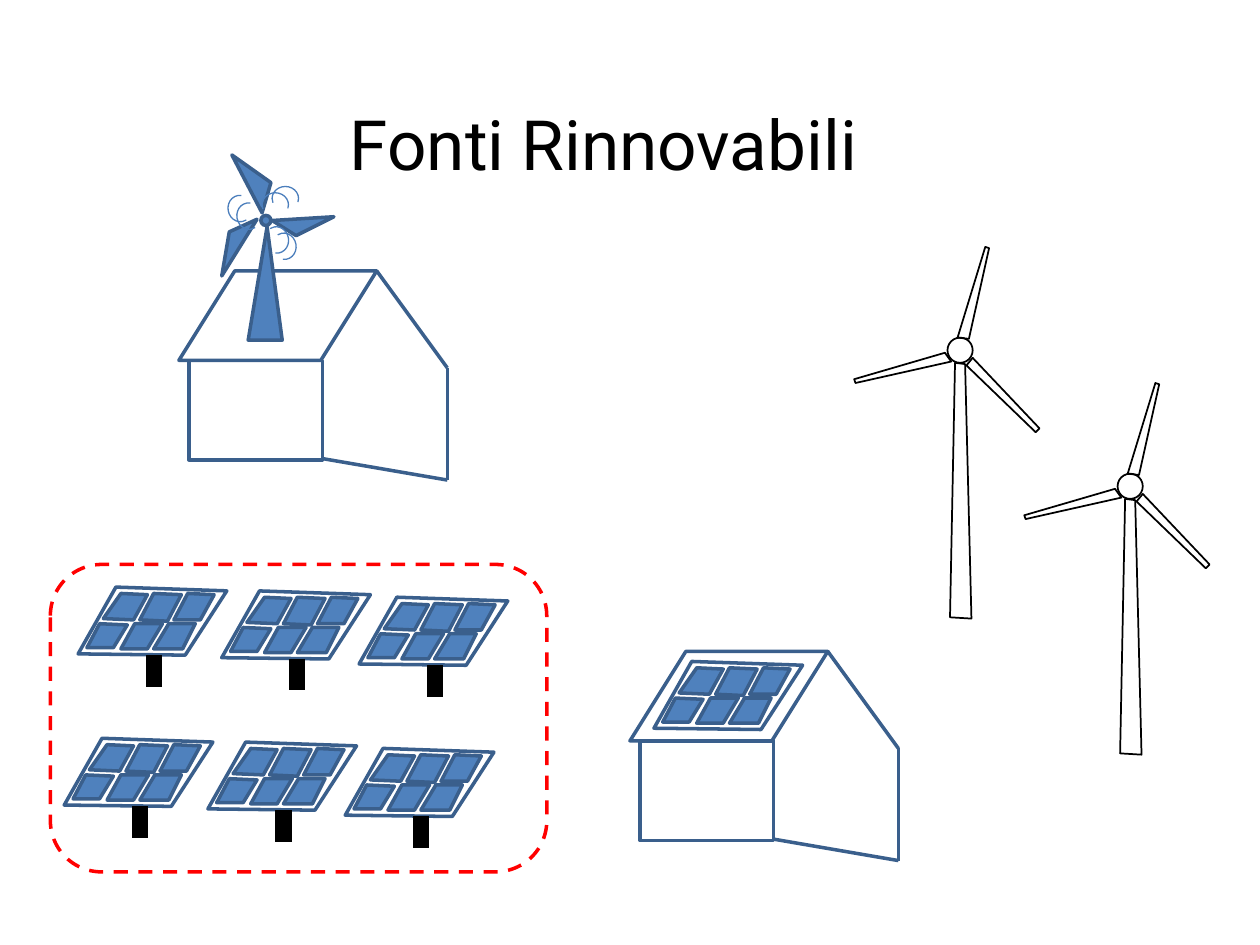
from dataclasses import dataclass
from typing import Any, Optional

import pptx
import pptx.dml.color
import pptx.enum.dml
import pptx.enum.shapes
import pptx.enum.text
import pptx.oxml
import pptx.oxml.ns
import pptx.util

PX = 9144  # EMU per px, 100 px to the inch
Point = tuple[int, int]
Shape = pptx.enum.shapes.MSO_SHAPE


@dataclass(frozen=True)
class Theme:
    font: str = "Roboto"
    title_size: float = 39.6
    black: str = "000000"
    blue: str = "4F81BD"
    dark_blue: str = "3A5F8C"
    arc_blue: str = "4B7EBC"
    red: str = "FF0000"


@dataclass(frozen=True)
class Style:
    line: str
    width: float
    fill: Optional[str] = None


@dataclass(frozen=True)
class Arc:
    left: int
    top: int
    rotation: float


@dataclass(frozen=True)
class Panel:
    left: int
    top: int
    has_pole: bool = True


THEME = Theme()
OUTLINE = Style(THEME.dark_blue, 2)
SOLID = Style(THEME.dark_blue, 2, THEME.blue)
THIN = Style(THEME.black, 1)
POLE = Style(THEME.black, 9.25)
SWIRL = Style(THEME.arc_blue, 0.75)
BORDER = Style(THEME.red, 2)

# Outlines relative to each object's own origin
PANEL_FRAME = [(30, 0), (0, 53), (85, 54), (118, 3)]
PANEL_CELLS = [
    [(34, 5), (20, 25), (44, 26), (55, 6)],
    [(60, 5), (49, 26), (71, 27), (82, 6)],
    [(87, 5), (76, 26), (97, 26), (108, 6)],
    [(17, 29), (7, 48), (28, 48), (39, 30)],
    [(45, 29), (34, 49), (55, 49), (67, 29)],
    [(72, 29), (60, 49), (83, 49), (93, 29)],
]
TURBINE_PARTS = [
    [(2, 222), (6, 20), (14, 21), (19, 223)],
    [(8, 0), (17, 1), (33, -71), (30, -72)],
    [(15, 22), (70, 75), (73, 72), (20, 16)],
    [(-2, 12), (-74, 33), (-73, 36), (3, 19)],
]
ROOF_MILL_PARTS = [
    [(197, 270), (224, 270), (212, 180)],
    [(204, 174), (182, 184), (176, 219)],
    [(208, 169), (184, 123), (215, 145)],
    [(216, 175), (235, 187), (265, 172)],
]
ROOF_MILL_ARCS = [
    Arc(216, 148, 0), Arc(208, 153, 0),
    Arc(209, 181, 79.8), Arc(215, 186, 79.8),
    Arc(187, 162, 260.4), Arc(180, 156, 260.4),
]
PANELS = [
    Panel(165, 589), Panel(51, 586), Panel(274, 594),
    Panel(176, 469), Panel(62, 466), Panel(285, 474),
    Panel(519, 525, has_pole=False),
]
HOUSES = [(508, 588), (150, 286)]
TURBINES = [(887, 376), (752, 268)]


def rgb(color: str) -> pptx.dml.color.RGBColor:
    return pptx.dml.color.RGBColor.from_string(color)


def apply_line(shape: Any, style: Style) -> None:
    shape.line.color.rgb = rgb(style.line)
    shape.line.width = pptx.util.Pt(style.width)


def apply_style(shape: Any, style: Style) -> Any:
    shape.shadow.inherit = False
    if style.fill is None:
        shape.fill.background()
    else:
        shape.fill.solid()
        shape.fill.fore_color.rgb = rgb(style.fill)
    apply_line(shape, style)
    return shape


def add_preset(slide: Any, kind: Any, left: int, top: int, width: int,
               height: int, style: Style) -> Any:
    shape = slide.shapes.add_shape(kind, left * PX, top * PX, width * PX, height * PX)
    return apply_style(shape, style)


def add_polygon(slide: Any, points: list[Point], style: Style,
                origin: Point = (0, 0)) -> Any:
    moved = [(x + origin[0], y + origin[1]) for x, y in points]
    builder = slide.shapes.build_freeform(*moved[0], scale=PX)
    builder.add_line_segments(moved[1:], close=True)
    return apply_style(builder.convert_to_shape(), style)


def add_line(slide: Any, start: Point, end: Point, style: Style,
             origin: Point = (0, 0)) -> Any:
    left, top = origin
    connector = slide.shapes.add_connector(
        pptx.enum.shapes.MSO_CONNECTOR.STRAIGHT,
        (start[0] + left) * PX, (start[1] + top) * PX,
        (end[0] + left) * PX, (end[1] + top) * PX)
    apply_line(connector, style)
    properties = connector._element.spPr
    properties.append(pptx.oxml.parse_xml(
        f'<a:effectLst {pptx.oxml.ns.nsdecls("a")}/>'))
    return connector


def add_panel(slide: Any, panel: Panel) -> None:
    origin = (panel.left, panel.top)
    parts = [add_polygon(slide, PANEL_FRAME, OUTLINE, origin)]
    parts += [add_polygon(slide, cell, SOLID, origin) for cell in PANEL_CELLS]
    if panel.has_pole:
        parts.append(add_line(slide, (60, 54), (60, 79), POLE, origin))
    slide.shapes.add_group_shape(parts)


def add_turbine(slide: Any, hub: Point) -> None:
    parts = [add_polygon(slide, part, THIN, hub) for part in TURBINE_PARTS]
    parts.append(add_preset(slide, Shape.OVAL, *hub, 20, 20, THIN))
    slide.shapes.add_group_shape(parts)


def add_house(slide: Any, wall: Point) -> None:
    left, top = wall
    add_preset(slide, Shape.RECTANGLE, left, top, 106, 79, OUTLINE)
    roof = add_preset(slide, Shape.PARALLELOGRAM, left - 8, top - 71, 157, 71, OUTLINE)
    roof.adjustments[0] = 0.625
    side = [(149, -71), (205, 6), (205, 95), (106, 78)]
    for start, end in zip(side, side[1:]):
        add_line(slide, start, end, OUTLINE, wall)


def add_roof_mill(slide: Any) -> None:
    parts = [add_polygon(slide, part, SOLID) for part in ROOF_MILL_PARTS]
    parts.append(add_preset(slide, Shape.OVAL, 207, 171, 8, 8, SOLID))
    for arc in ROOF_MILL_ARCS:
        swirl = add_preset(slide, Shape.ARC, arc.left, arc.top, 21, 19, SWIRL)
        for index, degrees in enumerate((160.75, 15.9)):
            swirl.adjustments[index] = degrees * 0.6  # 60000ths of a degree / 100000
        swirl.rotation = arc.rotation
        parts.append(swirl)
    slide.shapes.add_group_shape(parts)


def add_title(slide: Any, text: str) -> None:
    title = slide.shapes.title
    title.left, title.top, title.width, title.height = (
        value * PX for value in (29, 84, 900, 59))
    frame = title.text_frame
    frame.auto_size = pptx.enum.text.MSO_AUTO_SIZE.NONE
    frame.vertical_anchor = pptx.enum.text.MSO_ANCHOR.MIDDLE
    paragraph = frame.paragraphs[0]
    paragraph.alignment = pptx.enum.text.PP_ALIGN.CENTER
    run = paragraph.add_run()
    run.text = text
    run.font.name = THEME.font
    run.font.size = pptx.util.Pt(THEME.title_size)
    run.font.color.rgb = rgb(THEME.black)


def main() -> None:
    presentation = pptx.Presentation()
    presentation.slide_width, presentation.slide_height = 1000 * PX, 750 * PX
    slide = presentation.slides.add_slide(presentation.slide_layouts[5])
    add_title(slide, "Fonti Rinnovabili")

    # Houses, with the small wind mill on one roof
    for wall in HOUSES:
        add_house(slide, wall)
    add_roof_mill(slide)

    # Wind turbines and solar panels
    for hub in TURBINES:
        add_turbine(slide, hub)
    for panel in PANELS:
        add_panel(slide, panel)

    # Dashed border around the solar field
    border = add_preset(slide, Shape.ROUNDED_RECTANGLE, 40, 448, 394, 244, BORDER)
    border.line.dash_style = pptx.enum.dml.MSO_LINE.DASH

    presentation.save("out.pptx")


if __name__ == "__main__":
    main()
